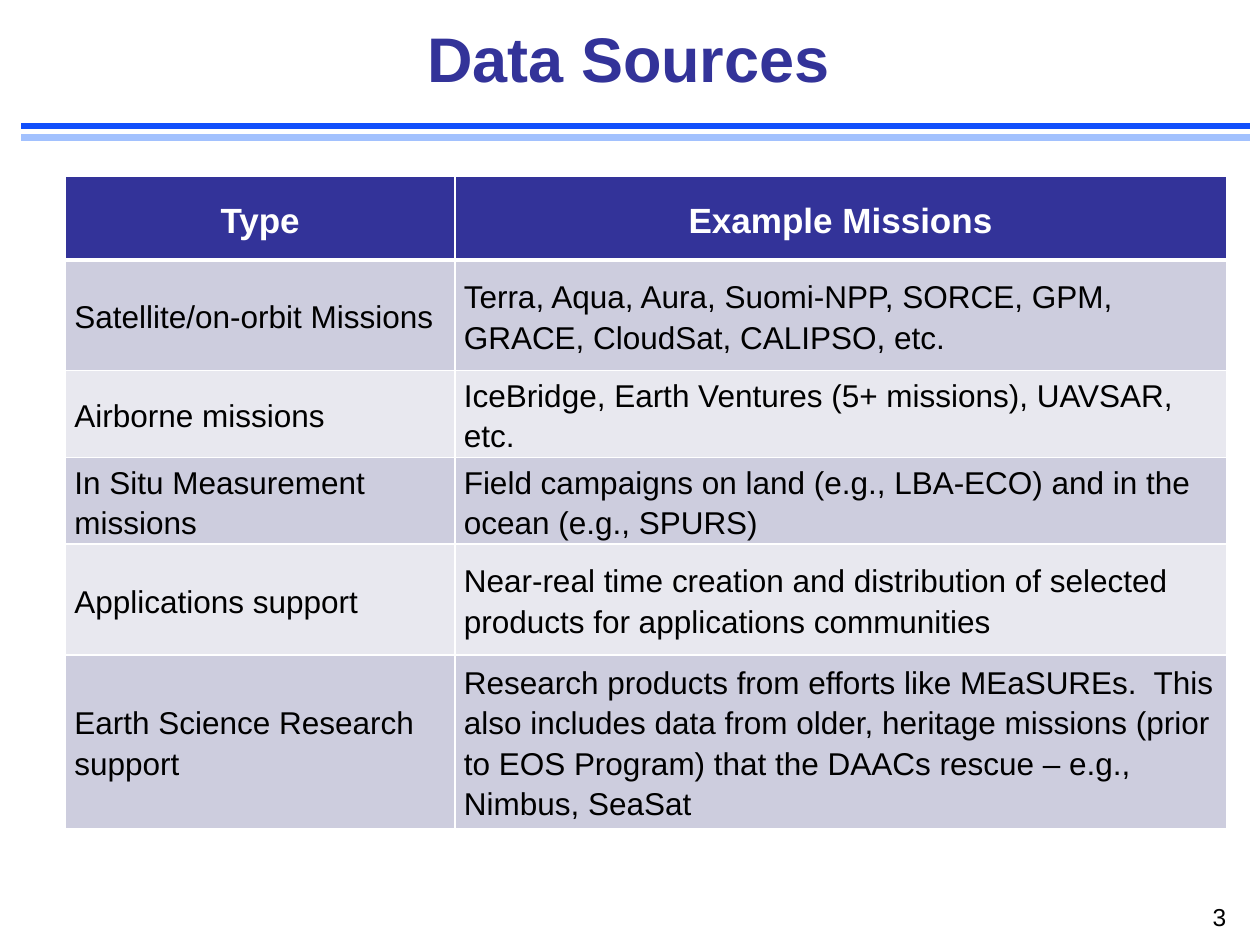
import pptx
import pptx.util
import pptx.dml.color
import pptx.enum.shapes
import pptx.enum.text
import pptx.oxml.ns
from lxml import etree

Cm, Pt = pptx.util.Cm, pptx.util.Pt
ALIGN = pptx.enum.text.PP_ALIGN
MID = pptx.enum.text.MSO_ANCHOR.MIDDLE

TITLE = "Data Sources"
PAGE = "3"
HEAD = ("Type", "Example Missions")
ROWS = [
    ("Satellite/on-orbit Missions",
     "Terra, Aqua, Aura, Suomi-NPP, SORCE, GPM, GRACE, CloudSat, CALIPSO, etc."),
    ("Airborne missions",
     "IceBridge, Earth Ventures (5+ missions), UAVSAR, etc."),
    ("In Situ Measurement missions",
     "Field campaigns on land (e.g., LBA-ECO) and in the ocean (e.g., SPURS)"),
    ("Applications support",
     "Near-real time creation and distribution of selected products "
     "for applications communities"),
    ("Earth Science Research support",
     "Research products from efforts like MEaSUREs.  This also includes data "
     "from older, heritage missions (prior to EOS Program) that the DAACs "
     "rescue – e.g., Nimbus, SeaSat"),
]
WIDTHS = (7.85, 15.55)
HEIGHTS = (1.68, 2.23, 1.75, 1.75, 2.23, 3.5)
RULES = [(2.54, "114FFB"), (2.77, "A2C1FE")]
NAVY, WHITE, BLACK = "333399", "FFFFFF", "000000"
BANDS = ("CDCDDE", "E8E8EF")


def rgb(code):
    return pptx.dml.color.RGBColor.from_string(code)


def write(frame, text, size, color, bold=False, align=ALIGN.LEFT, space=1.0):
    frame.word_wrap = True
    para = frame.paragraphs[0]
    para.alignment = align
    para.line_spacing = space
    run = para.add_run()
    run.text = text
    run.font.name = "Arial"
    run.font.size = Pt(size)
    run.font.bold = bold
    run.font.color.rgb = rgb(color)


def border(cell, side, width):
    """Draw a white line on one side (L, R, T or B) of a cell."""
    qn = pptx.oxml.ns.qn
    props = cell._tc.get_or_add_tcPr()
    line = etree.SubElement(props, qn("a:ln" + side), w=str(Pt(width)))
    fill = etree.SubElement(line, qn("a:solidFill"))
    etree.SubElement(fill, qn("a:srgbClr"), val=WHITE)


def add_rule(slide, top, color):
    rule = slide.shapes.add_connector(
        pptx.enum.shapes.MSO_CONNECTOR.STRAIGHT,
        Cm(0.43), Cm(top), Cm(25.2), Cm(top))
    rule.line.width = Pt(4)
    rule.line.color.rgb = rgb(color)
    etree.SubElement(rule._element.spPr, pptx.oxml.ns.qn("a:effectLst"))


def add_grid(slide):
    rows = [HEAD] + ROWS
    grid = slide.shapes.add_table(
        len(rows), len(HEAD), Cm(1.32), Cm(3.56),
        Cm(sum(WIDTHS)), Cm(sum(HEIGHTS))).table
    for col, width in zip(grid.columns, WIDTHS):
        col.width = Cm(width)
    for i, (row, height) in enumerate(zip(rows, HEIGHTS)):
        grid.rows[i].height = Cm(height)
        for j, text in enumerate(row):
            cell = grid.cell(i, j)
            cell.vertical_anchor = MID
            cell.margin_left = cell.margin_right = Cm(0.18)
            cell.margin_top = cell.margin_bottom = 0
            for side in "LRTB":
                thick = (i, side) in ((0, "B"), (1, "T"))
                border(cell, side, 3 if thick else 1)
            cell.fill.solid()
            if i == 0:
                cell.fill.fore_color.rgb = rgb(NAVY)
                write(cell.text_frame, text, 20, WHITE, True, ALIGN.CENTER, 1.15)
            else:
                cell.fill.fore_color.rgb = rgb(BANDS[(i - 1) % 2])
                write(cell.text_frame, text, 18, BLACK, space=1.15)


def main():
    deck = pptx.Presentation()
    deck.slide_width, deck.slide_height = Cm(25.4), Cm(19.05)
    slide = deck.slides.add_slide(deck.slide_layouts[5])
    for top, color in RULES:
        add_rule(slide, top, color)

    title = slide.shapes.title
    title.left, title.top = Cm(3.02), Cm(0.1)
    title.width, title.height = Cm(19.3), Cm(2.36)
    title.text_frame.vertical_anchor = MID
    write(title.text_frame, TITLE, 36, NAVY, True, ALIGN.CENTER, 0.85)

    add_grid(slide)
    page = slide.shapes.add_textbox(Cm(19.69), Cm(18.06), Cm(5.28), Cm(0.99))
    write(page.text_frame, PAGE, 14, BLACK, align=ALIGN.RIGHT)
    deck.save("out.pptx")


if __name__ == "__main__":
    main()
